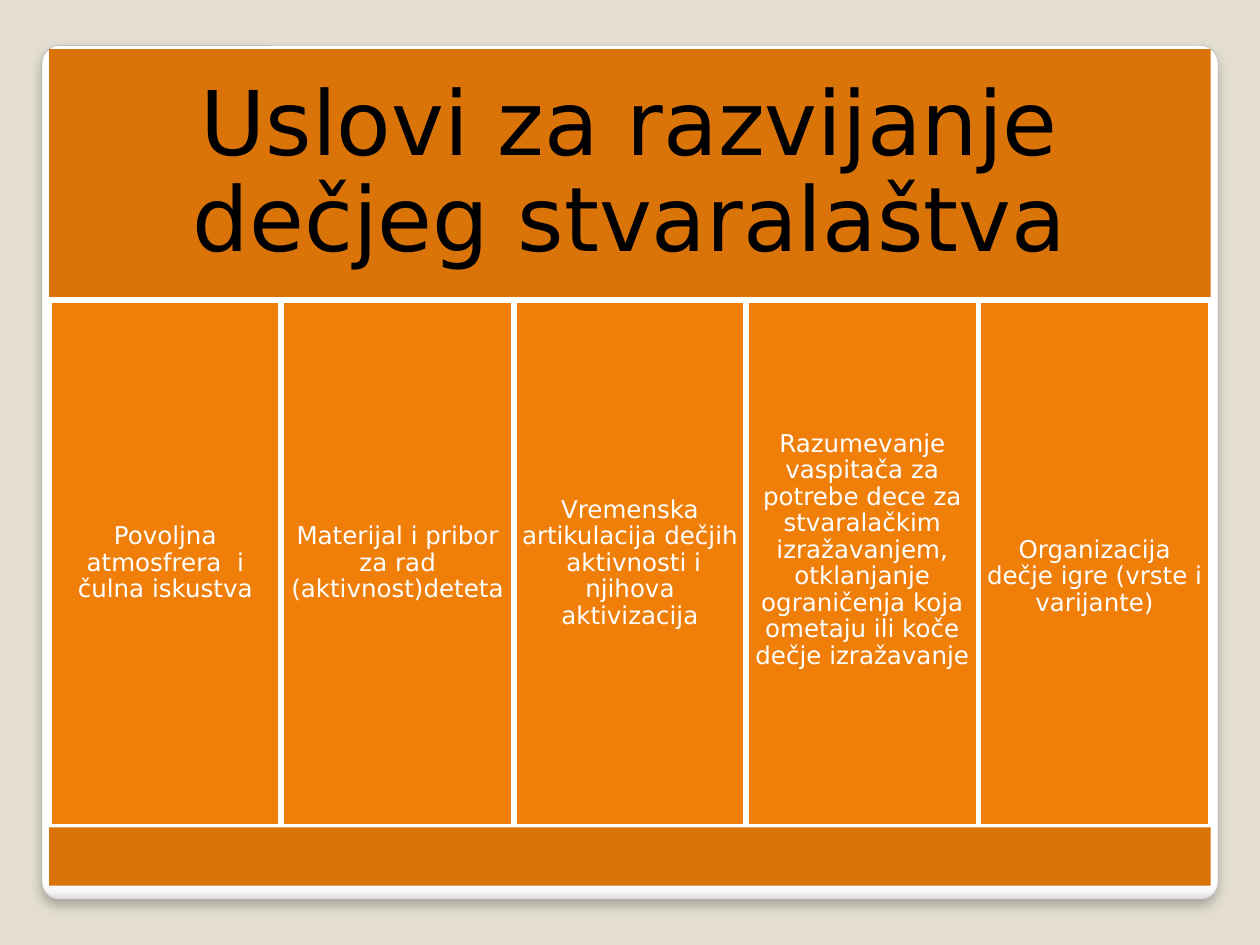
from lxml import etree
from pptx import Presentation
from pptx.dml.color import RGBColor
from pptx.enum.shapes import MSO_SHAPE as Shape
from pptx.enum.text import MSO_ANCHOR as Anchor, MSO_AUTO_SIZE as AutoSize, PP_ALIGN as Align
from pptx.oxml import parse_xml
from pptx.oxml.ns import nsdecls, qn
from pptx.util import Pt

BACKDROP = RGBColor(0xE3, 0xDE, 0xD1)
PANEL_EDGE = RGBColor(0xA4, 0xA4, 0xA4)
BAND = RGBColor(0xDA, 0x73, 0x08)
COLUMN = RGBColor(0xF0, 0x7F, 0x09)
WHITE = RGBColor(0xFF, 0xFF, 0xFF)
BLACK = RGBColor(0x00, 0x00, 0x00)
PANEL_STOPS = [
    (0, WHITE),
    (98, WHITE),
    (99, RGBColor(0xF7, 0xF7, 0xF7)),
    (100, RGBColor(0xDA, 0xDA, 0xDA)),
]

FONT = "DejaVu Sans"
LINE_HEIGHT = 15
TITLE = "Uslovi za razvijanje dečjeg stvaralaštva"
CONDITIONS = [
    ("Povoljna atmosfrera  i čulna iskustva", 0, 0),
    ("Materijal i pribor za rad (aktivnost)deteta", 0, 0),
    ("Vremenska artikulacija dečjih  aktivnosti i njihova aktivizacija", 0, 0),
    ("Razumevanje vaspitača za potrebe dece za stvaralačkim izražavanjem, "
     "otklanjanje ograničenja koja ometaju ili koče dečje izražavanje", 0, LINE_HEIGHT),
    ("Organizacija dečje igre (vrste i varijante)", LINE_HEIGHT, 0),
]


def set_all(target, values):
    for name, value in values.items():
        setattr(target, name, value)


def place(item, box):
    set_all(item, dict(zip(("left", "top", "width", "height"), map(Pt, box))))


def paint(item, color):
    item.fill.solid()
    item.fill.fore_color.rgb = color


def write(item, text, size, color, inset, extra_top=0, extra_bottom=0):
    frame = item.text_frame
    frame.text = text
    set_all(frame, {
        "word_wrap": True,
        "auto_size": AutoSize.NONE,
        "vertical_anchor": Anchor.MIDDLE,
        "margin_left": Pt(inset),
        "margin_right": Pt(inset),
        "margin_top": Pt(inset + extra_top),
        "margin_bottom": Pt(inset + extra_bottom),
    })
    paragraph = frame.paragraphs[0]
    set_all(paragraph, {
        "alignment": Align.CENTER,
        "line_spacing": 0.9,
        "space_before": Pt(0),
    })
    font = paragraph.runs[0].font
    set_all(font, {"name": FONT, "size": Pt(size), "bold": False})
    font.color.rgb = color


def add_block(slide, box, color, kind=Shape.RECTANGLE):
    block = slide.shapes.add_shape(kind, *map(Pt, box))
    block.shadow.inherit = False
    paint(block, color)
    block.line.fill.background()
    return block


def add_panel(slide, box):
    panel = add_block(slide, box, WHITE, Shape.ROUNDED_RECTANGLE)
    panel.adjustments[0] = 0.021
    panel.line.color.rgb = PANEL_EDGE
    panel.line.width = Pt(0.16)
    stops = "".join(
        f'<a:gs pos="{position * 1000}"><a:srgbClr val="{color}"/></a:gs>'
        for position, color in PANEL_STOPS
    )
    gradient = parse_xml(
        f'<a:gradFill {nsdecls("a")} rotWithShape="1"><a:gsLst>{stops}</a:gsLst>'
        '<a:lin ang="5400000" scaled="0"/></a:gradFill>'
    )
    properties = panel._element.spPr
    properties.replace(properties.find(qn("a:solidFill")), gradient)
    effects = properties.find(qn("a:effectLst"))
    shadow = etree.SubElement(
        effects, qn("a:outerShdw"),
        blurRad=str(Pt(6)), dist=str(Pt(4)), dir="5400000", algn="t", rotWithShape="0",
    )
    shade = etree.SubElement(shadow, qn("a:srgbClr"), val=str(BLACK))
    etree.SubElement(shade, qn("a:alpha"), val="25000")
    slide.shapes.title._element.addprevious(panel._element)


def fill_title(slide, box):
    title = slide.shapes.title
    place(title, box)
    paint(title, BAND)
    write(title, TITLE, 51, BLACK, 15)


def add_columns(slide, box):
    left, top, width, height = box
    step = width / len(CONDITIONS)
    for index, (condition, extra_top, extra_bottom) in enumerate(CONDITIONS):
        column = add_block(slide, (left + index * step, top, step, height), COLUMN)
        column.line.color.rgb = WHITE
        column.line.width = Pt(3.35)
        write(column, condition, 14, WHITE, 4.2, extra_top, extra_bottom)


def main():
    deck = Presentation()
    set_all(deck, {"slide_width": Pt(720), "slide_height": Pt(540)})
    slide = deck.slides.add_slide(deck.slide_layouts[5])
    paint(slide.background, BACKDROP)

    left, width = 28.1, 663.8
    add_panel(slide, (24, 26, 672, 488))
    fill_title(slide, (left, 28, width, 143.5))
    add_columns(slide, (left, 171.5, width, 301))
    add_block(slide, (left, 472.8, width, 33.4), BAND)
    deck.save("out.pptx")


if __name__ == "__main__":
    main()
